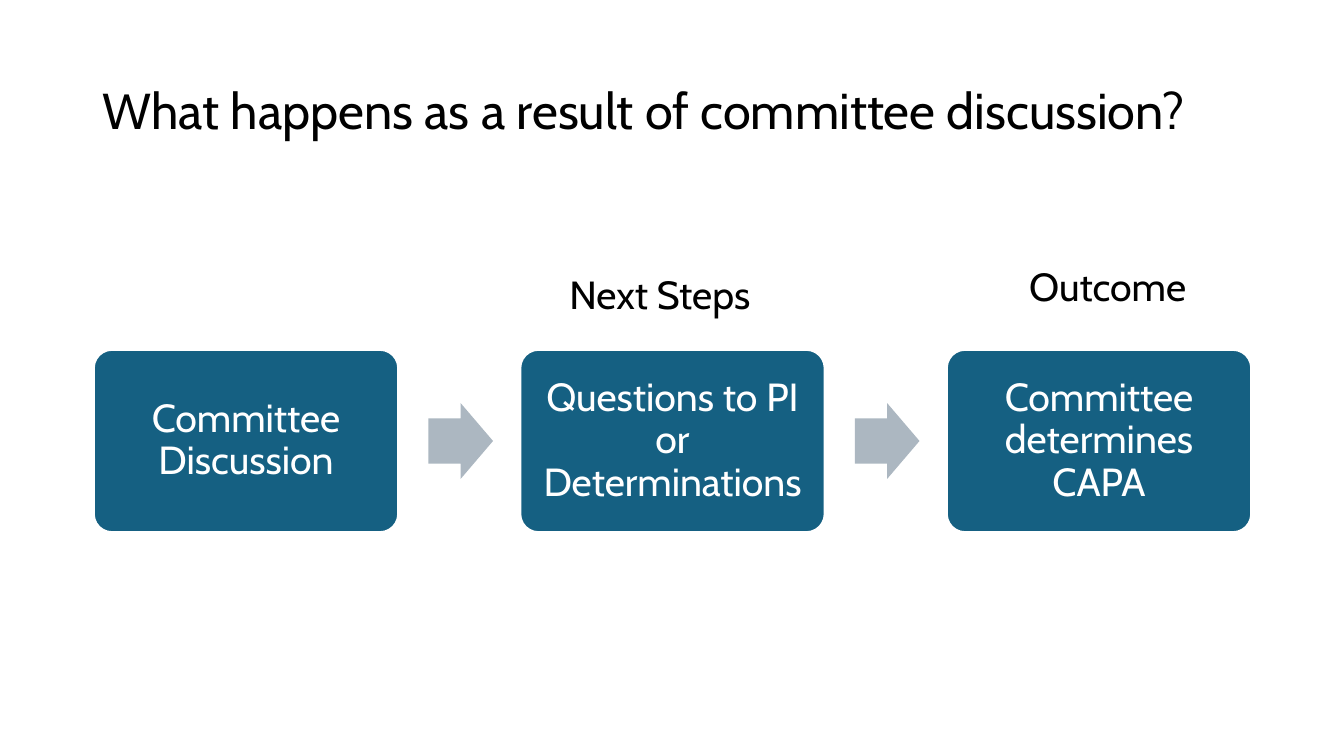
import pptx
import pptx.dml.color
import pptx.enum.shapes
import pptx.enum.text
import pptx.util

Inches = pptx.util.Inches
Shapes = pptx.enum.shapes.MSO_SHAPE
Align = pptx.enum.text.PP_ALIGN
Anchor = pptx.enum.text.MSO_ANCHOR


def color(hex_code):
    return pptx.dml.color.RGBColor.from_string(hex_code)


class FlowSlide:
    FONT = "Cabin"
    INK, WHITE, BLUE, GREY = "000000", "FFFFFF", "156082", "ACB7C1"

    def __init__(self, slide):
        self.slide = slide

    def set_text(self, shape, text, size, hex_code, align=Align.LEFT, spacing=1.0):
        shape.text_frame.word_wrap = True
        paragraph = shape.text_frame.paragraphs[0]
        paragraph.text = text
        paragraph.alignment = align
        paragraph.line_spacing = spacing
        paragraph.font.name = self.FONT
        paragraph.font.size = pptx.util.Pt(size)
        paragraph.font.color.rgb = color(hex_code)

    def title(self, text, left, top, width, height):
        box = self.slide.shapes.add_textbox(
            Inches(left), Inches(top), Inches(width), Inches(height))
        box.text_frame.vertical_anchor = Anchor.MIDDLE
        self.set_text(box, text, 36, self.INK, spacing=0.9)

    def heading(self, text, left, top, width, height=0.57):
        box = self.slide.shapes.add_textbox(
            Inches(left), Inches(top), Inches(width), Inches(height))
        self.set_text(box, text, 28, self.INK)

    def solid(self, preset, left, top, width, height, fill):
        """Add a filled preset shape without shadow or outline."""
        shape = self.slide.shapes.add_shape(
            preset, Inches(left), Inches(top), Inches(width), Inches(height))
        shape.shadow.inherit = False
        shape.fill.solid()
        shape.fill.fore_color.rgb = color(fill)
        shape.line.fill.background()
        return shape

    def step(self, text, left, top, width, height):
        card = self.solid(Shapes.ROUNDED_RECTANGLE, left, top, width, height, self.BLUE)
        card.adjustments[0] = 0.1
        card.line.color.rgb = color(self.WHITE)
        card.line.width = pptx.util.Pt(1.5)
        frame = card.text_frame
        frame.vertical_anchor = Anchor.MIDDLE
        frame.margin_left = frame.margin_right = Inches(0.14)
        frame.margin_top = frame.margin_bottom = Inches(0.14)
        self.set_text(card, text, 28, self.WHITE, Align.CENTER, 0.9)

    def arrow(self, left, top, width, height):
        arrow = self.solid(Shapes.RIGHT_ARROW, left, top, width, height, self.GREY)
        arrow.adjustments[0] = 0.6
        arrow.adjustments[1] = 0.5


def main():
    deck = pptx.Presentation()
    deck.slide_width, deck.slide_height = Inches(13.33), Inches(7.5)
    page = FlowSlide(deck.slides.add_slide(deck.slide_layouts[6]))

    page.title("What happens as a result of committee discussion?", 0.92, 0.4, 11.5, 1.45)

    steps = ["Committee Discussion", "Questions to PI or Determinations",
             "Committee determines CAPA"]
    first_left, pitch, step_width = 0.93, 4.23, 3.02
    for index, text in enumerate(steps):
        left = first_left + index * pitch
        if index:
            page.arrow(left - 0.91, 4, 0.64, 0.75)
        page.step(text, left, 3.47, step_width, 1.81)

    page.heading("Outcome", 10.11, 2.55, 1.84)
    page.heading("Next Steps", 5.55, 2.63, 2.17)
    deck.save("out.pptx")


if __name__ == "__main__":
    main()
